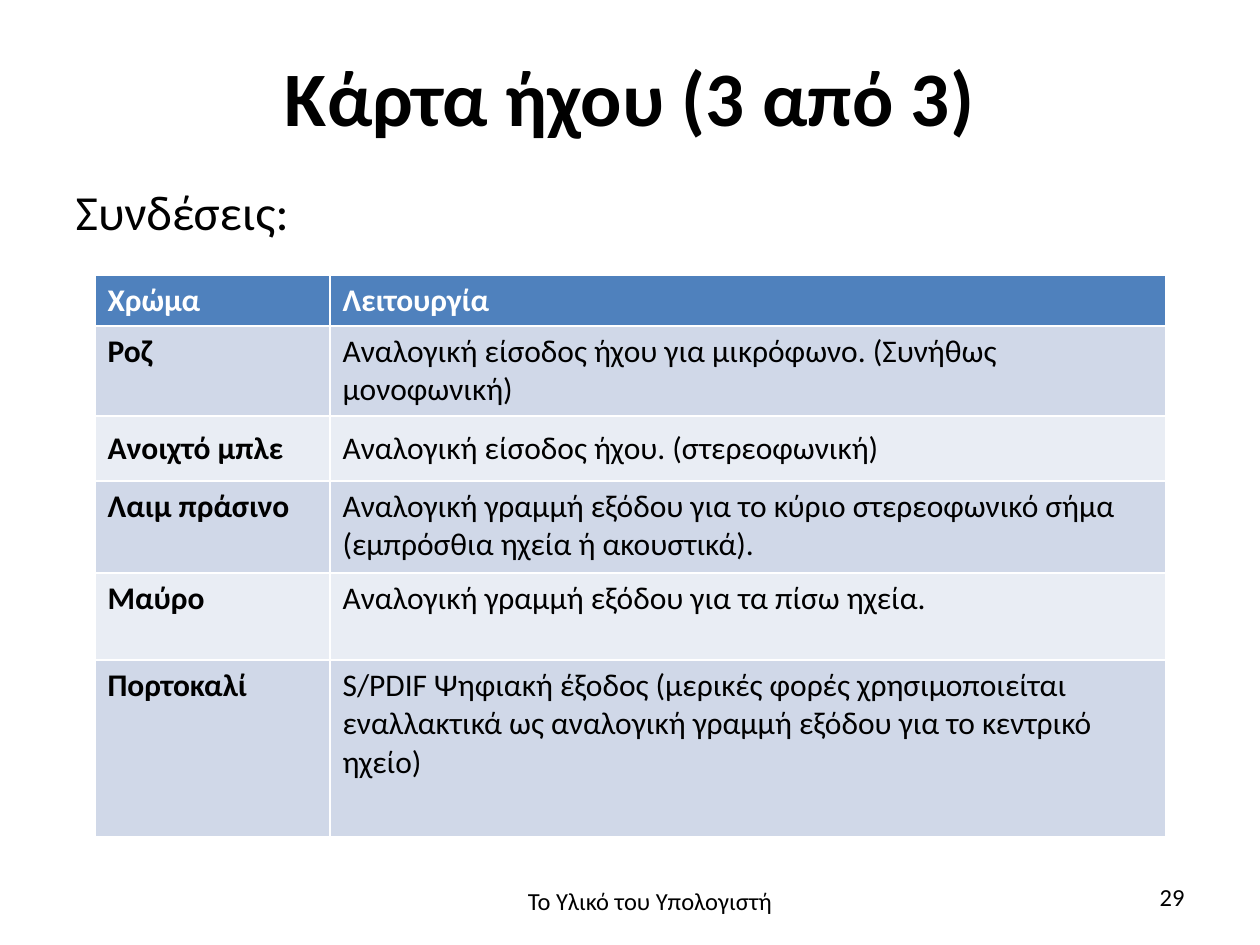
from pptx import Presentation
from pptx.dml.color import RGBColor
from pptx.enum.text import MSO_ANCHOR, MSO_AUTO_SIZE, PP_ALIGN
from pptx.util import Pt

BLACK, WHITE, BLUE = "000000", "FFFFFF", "4F81BD"
BANDS = ["D0D8E8", "E9EDF4"]
COLUMN_WIDTHS = [235, 836]
ROW_HEIGHTS = [50, 90, 65, 92, 87, 177]
CONNECTIONS = [
    ("Χρώμα", "Λειτουργία"),
    ("Ροζ", "Αναλογική είσοδος ήχου για μικρόφωνο. (Συνήθως μονοφωνική)"),
    ("Ανοιχτό μπλε", "Αναλογική είσοδος ήχου. (στερεοφωνική)"),
    ("Λαιμ πράσινο", "Αναλογική γραμμή εξόδου για το κύριο στερεοφωνικό σήμα "
                     "(εμπρόσθια ηχεία ή ακουστικά)."),
    ("Μαύρο", "Αναλογική γραμμή εξόδου για τα πίσω ηχεία."),
    ("Πορτοκαλί", "S/PDIF Ψηφιακή έξοδος (μερικές φορές χρησιμοποιείται εναλλακτικά "
                  "ως αναλογική γραμμή εξόδου για το κεντρικό ηχείο)"),
]


def px(n):
    return round(n * 914400 / 126)


def color(code):
    return RGBColor.from_string(code)


def write(tf, text, size, code=BLACK, bold=False, align=PP_ALIGN.LEFT):
    tf.text = text
    tf.word_wrap = True
    p = tf.paragraphs[0]
    p.alignment = align
    font = p.runs[0].font
    font.name, font.size, font.bold = "Calibri", Pt(size), bold
    font.color.rgb = color(code)
    return p


def place(sp, x, y, w, h):
    sp.left, sp.top, sp.width, sp.height = px(x), px(y), px(w), px(h)
    sp.text_frame.auto_size = MSO_AUTO_SIZE.NONE


def add_title(s, *box):
    sp = s.shapes.title
    place(sp, *box)
    write(sp.text_frame, "Κάρτα ήχου (3 από 3)", 44, bold=True, align=PP_ALIGN.CENTER)
    sp.text_frame.vertical_anchor = MSO_ANCHOR.MIDDLE


def add_intro(s, *box):
    sp = s.placeholders[1]
    place(sp, *box)
    p = write(sp.text_frame, "Συνδέσεις:", 28)
    p.space_before = Pt(12)
    pPr = p._p.get_or_add_pPr()
    pPr.set("marL", "0")
    pPr.set("indent", "0")
    pPr.append(pPr.makeelement(
        "{http://schemas.openxmlformats.org/drawingml/2006/main}buNone", {}))


def add_connections(s, x, y):
    table = s.shapes.add_table(
        len(ROW_HEIGHTS), len(COLUMN_WIDTHS), px(x), px(y),
        px(sum(COLUMN_WIDTHS)), px(sum(ROW_HEIGHTS))).table
    for column, width in zip(table.columns, COLUMN_WIDTHS):
        column.width = px(width)
    for i, (height, texts) in enumerate(zip(ROW_HEIGHTS, CONNECTIONS)):
        table.rows[i].height = px(height)
        header = i == 0
        for j, text in enumerate(texts):
            cell = table.cell(i, j)
            cell.fill.solid()
            cell.fill.fore_color.rgb = color(BLUE if header else BANDS[(i - 1) % 2])
            write(cell.text_frame, text, 18, WHITE if header else BLACK,
                  bold=header or j == 0)
            if texts[0] == "Ανοιχτό μπλε":
                cell.vertical_anchor = MSO_ANCHOR.MIDDLE


def add_footer(s, x, y, w, h):
    """Place the lecture name in the middle and the page number at the right."""
    for text, left, top, width, align in [
            ("Το Υλικό του Υπολογιστή", 0, 4, 440, PP_ALIGN.CENTER),
            ("29", w - 294, 0, 294, PP_ALIGN.RIGHT)]:
        sp = s.shapes.add_textbox(px(x + left), px(y + top), px(width), px(h))
        write(sp.text_frame, text, 14, align=align)


def main():
    prs = Presentation()
    prs.slide_width, prs.slide_height = px(1260), px(945)
    s = prs.slides.add_slide(prs.slide_layouts[1])
    add_title(s, 63, 6, 1134, 179)
    add_intro(s, 63, 175, 1134, 79)
    add_connections(s, 95, 275)
    add_footer(s, 430, 876, 767, 50)
    prs.save("out.pptx")


if __name__ == "__main__":
    main()
